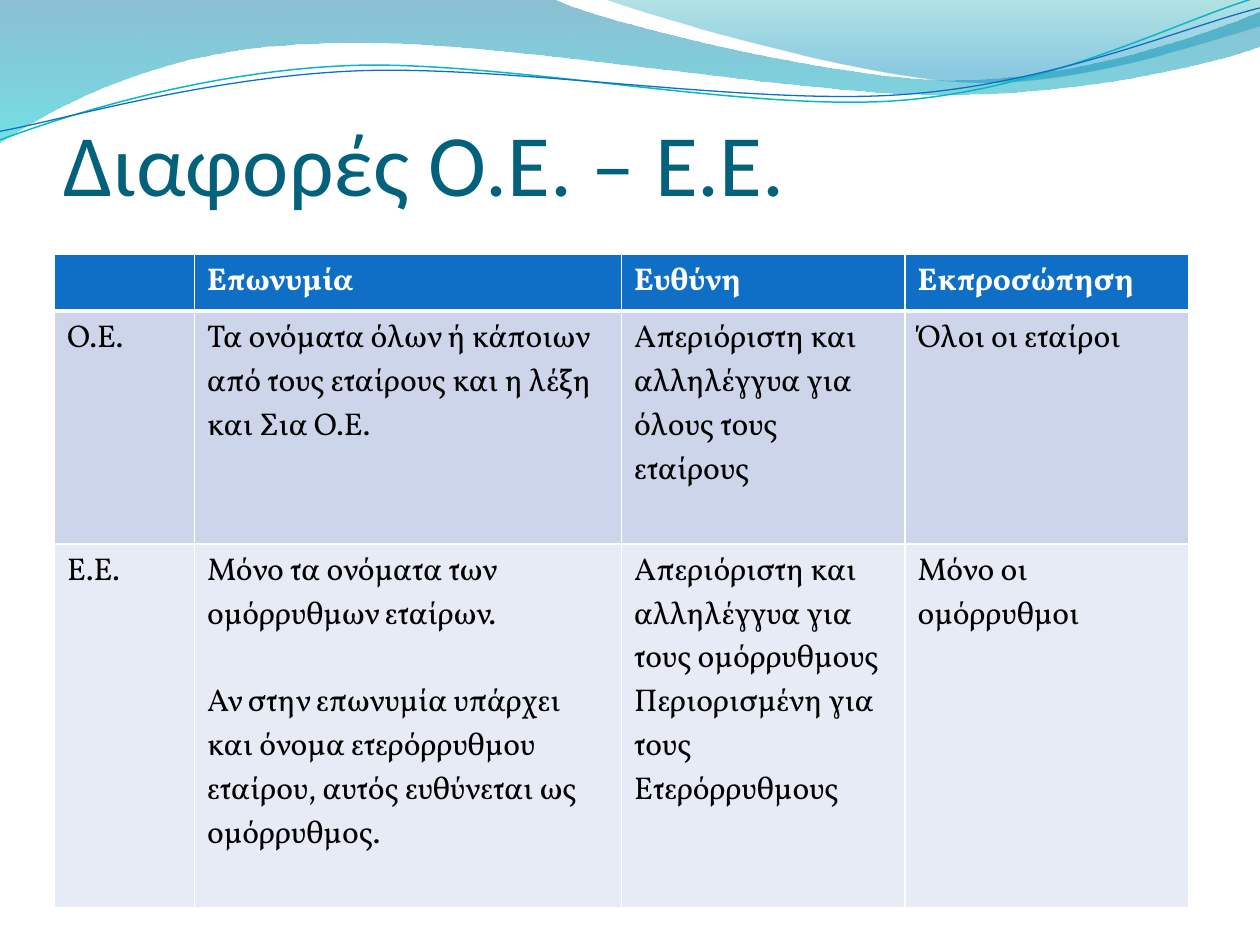
from lxml import etree
from pptx import Presentation
from pptx.dml.color import RGBColor
from pptx.enum.text import MSO_ANCHOR, MSO_AUTO_SIZE, PP_ALIGN
from pptx.oxml.ns import qn
from pptx.util import Pt

LEFT = PP_ALIGN.LEFT
BOTTOM = MSO_ANCHOR.BOTTOM
NO_AUTOFIT = MSO_AUTO_SIZE.NONE

COLUMN_WIDTHS = [80, 244, 162, 162]
ROW_HEIGHTS = [31, 133, 208]
ROW_FILLS = ["0F6FC6", "CCD5EA", "E7EBF5"]
ROWS = [
    ["", "Επωνυμία", "Ευθύνη", "Εκπροσώπηση"],
    [
        "Ο.Ε.",
        "Τα ονόματα όλων ή κάποιων από τους εταίρους και η λέξη και Σια Ο.Ε.",
        "Απεριόριστη και αλληλέγγυα για όλους τους εταίρους",
        "Όλοι οι εταίροι",
    ],
    [
        "Ε.Ε.",
        "Μόνο τα ονόματα των ομόρρυθμων εταίρων.\n"
        "Αν στην επωνυμία υπάρχει και όνομα ετερόρρυθμου εταίρου, "
        "αυτός ευθύνεται ως ομόρρυθμος.",
        "Απεριόριστη και αλληλέγγυα για τους ομόρρυθμους\n"
        "Περιορισμένη για τους Ετερόρρυθμους",
        "Μόνο οι ομόρρυθμοι",
    ],
]

WIDE_WAVE = [
    [(0, -0.5)],
    [(317, -0.5)],
    [(343, 12), (478, 45.5), (546, 45.5)],
    [(614, 45.5), (690, 19), (720, 6.5)],
    [(720.5, 26)],
    [(708, 32), (626, 54.5), (537, 54)],
    [(448, 54), (275, 20), (185, 24.5)],
    [(93, 26), (33, 60), (-0.5, 81.5)],
]
RIGHT_WAVE = [
    [(345, -0.5)],
    [(366.5, 8), (491, 44.5), (553.5, 47)],
    [(616, 49.5), (692, 23), (720, 15)],
    [(720, 0)],
]
TEAL_LINE = [
    [(0, 80)],
    [(34.5, 67), (114, 41), (199, 37.5)],
    [(284.5, 34), (427, 64), (513, 57.5)],
    [(600, 51), (675, 11), (718.5, -1.5)],
]
BLUE_LINE = [
    [(0, 75)],
    [(34, 69), (118, 44), (204, 40.5)],
    [(290, 37), (430, 60.5), (516, 54)],
    [(602, 48), (677.5, 15), (720, 4.5)],
]


def color(value):
    return RGBColor.from_string(value)


def bend_segments(shape, segments):
    lines = iter(list(shape._element.spPr.iter(qn("a:lnTo"))))
    for segment in segments[1:]:
        group = [next(lines) for _ in segment]
        if len(group) == 1:
            continue
        curve = etree.Element(qn("a:cubicBezTo"))
        group[0].addprevious(curve)
        for line in group:
            curve.append(line[0])
            line.getparent().remove(line)


def add_outline(slide, segments, close):
    points = [(Pt(x), Pt(y)) for segment in segments for x, y in segment]
    builder = slide.shapes.build_freeform(*points[0])
    builder.add_line_segments(points[1:], close=close)
    shape = builder.convert_to_shape()
    shape.shadow.inherit = False
    bend_segments(shape, segments)
    return shape


def add_wave(slide, segments, stops):
    shape = add_outline(slide, segments, True)
    shape.line.fill.background()
    shape.fill.gradient()
    shape.fill.gradient_angle = 270
    for gradient_stop, (position, value, _) in zip(shape.fill.gradient_stops, stops):
        gradient_stop.position = position
        gradient_stop.color.rgb = color(value)
    color_elements = shape._element.spPr.iter(qn("a:srgbClr"))
    for element, (_, _, opacity) in zip(list(color_elements), stops):
        etree.SubElement(element, qn("a:alpha"), val=str(opacity * 1000))


def add_wave_line(slide, segments, value, width):
    shape = add_outline(slide, segments, False)
    shape.fill.background()
    shape.line.color.rgb = color(value)
    shape.line.width = Pt(width)


def set_font(paragraph, name, size, value, bold=False):
    font = paragraph.font
    font.name = name
    font.size = Pt(size)
    font.color.rgb = color(value)
    font.bold = bold


def fill_title(slide, text):
    title = slide.shapes.title
    title.left, title.top, title.width, title.height = Pt(36), Pt(55.5), Pt(648), Pt(67)
    frame = title.text_frame
    frame.text = text
    frame.auto_size = NO_AUTOFIT
    frame.vertical_anchor = BOTTOM
    frame.margin_left = frame.margin_right = frame.margin_bottom = 0
    frame.margin_top = Pt(3.6)
    paragraph = frame.paragraphs[0]
    paragraph.alignment = LEFT
    set_font(paragraph, "Calibri", 50, "04617B")


def set_borders(cell, top, bottom):
    properties = cell._tc.get_or_add_tcPr()
    for side, width in (("L", 1), ("R", 1), ("T", top), ("B", bottom)):
        line = etree.SubElement(properties, qn(f"a:ln{side}"), w=str(Pt(width)))
        solid = etree.SubElement(line, qn("a:solidFill"))
        etree.SubElement(solid, qn("a:srgbClr"), val="FFFFFF")


def add_comparison_table(slide):
    table = slide.shapes.add_table(
        len(ROWS), len(COLUMN_WIDTHS), Pt(31.2), Pt(145.5),
        Pt(sum(COLUMN_WIDTHS)), Pt(sum(ROW_HEIGHTS)),
    ).table
    for column, width in zip(table.columns, COLUMN_WIDTHS):
        column.width = Pt(width)
    for index, (row, height) in enumerate(zip(table.rows, ROW_HEIGHTS)):
        row.height = Pt(height)
        header = index == 0
        for cell, text in zip(row.cells, ROWS[index]):
            cell.text = text
            set_borders(cell, 3 if index == 1 else 1, 3 if header else 1)
            cell.fill.solid()
            cell.fill.fore_color.rgb = color(ROW_FILLS[index])
            for paragraph in cell.text_frame.paragraphs:
                set_font(paragraph, "Vollkorn", 18, "FFFFFF" if header else "000000", header)
    table.cell(2, 1).text_frame.paragraphs[1].space_before = Pt(25)


def main():
    presentation = Presentation()
    presentation.slide_width, presentation.slide_height = Pt(720), Pt(540)
    slide = presentation.slides.add_slide(presentation.slide_layouts[5])
    add_wave(slide, WIDE_WAVE, [(0, "0074A1", 45), (1, "00C6CF", 55)])
    add_wave(slide, RIGHT_WAVE, [(0, "00A1A9", 30), (0.8, "008BBF", 45)])
    add_wave_line(slide, TEAL_LINE, "0AB8BF", 0.85)
    add_wave_line(slide, BLUE_LINE, "0F6FC6", 0.75)
    fill_title(slide, "Διαφορές Ο.Ε. – Ε.Ε.")
    add_comparison_table(slide)
    presentation.save("out.pptx")


if __name__ == "__main__":
    main()
